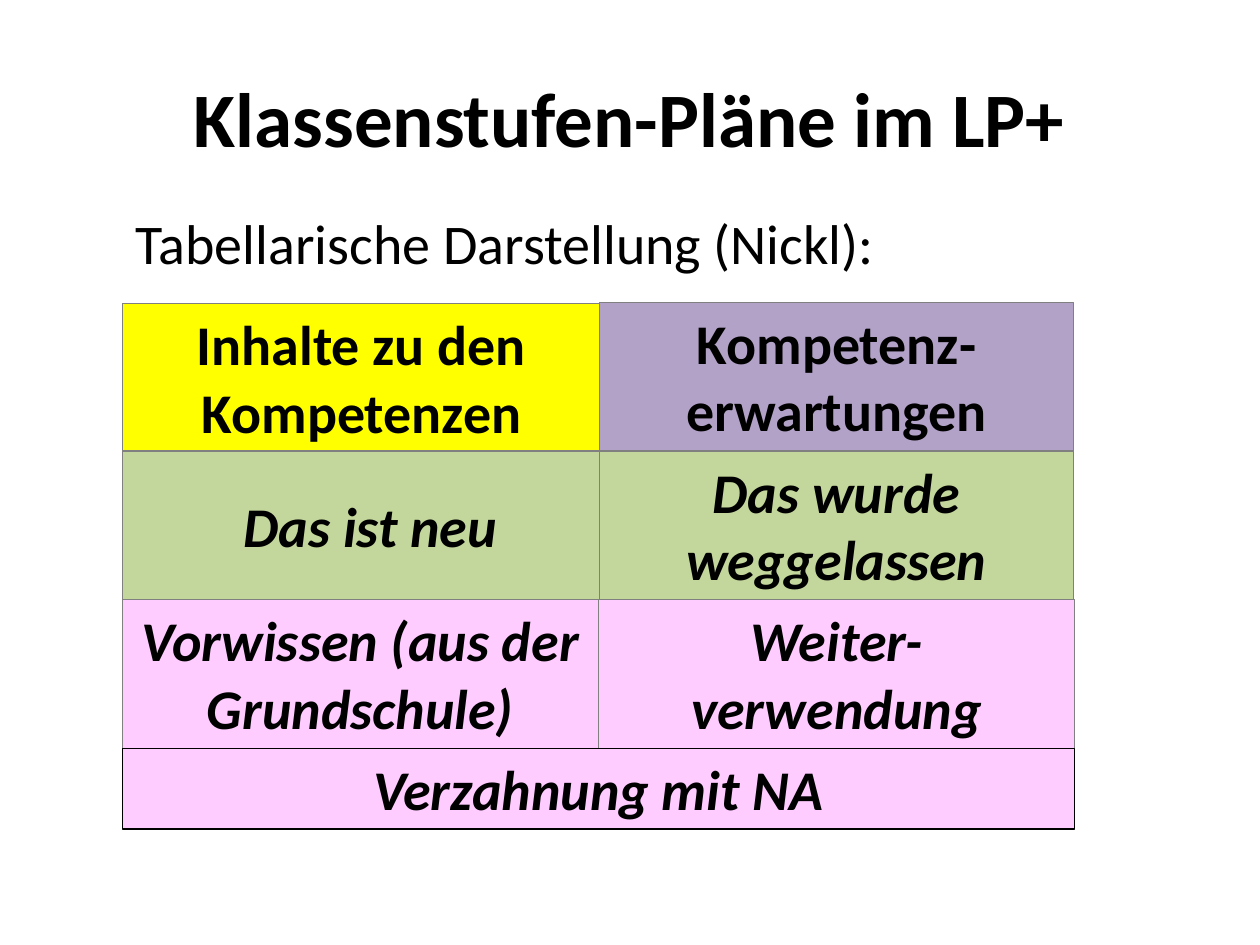
from pptx import Presentation
from pptx.dml.color import RGBColor
from pptx.enum import shapes, text
from pptx.util import Inches, Pt

BLACK = RGBColor(0x00, 0x00, 0x00)
GRAY = RGBColor(0x80, 0x80, 0x80)
YELLOW = RGBColor(0xFF, 0xFF, 0x00)
PURPLE = RGBColor(0xB3, 0xA2, 0xC7)
GREEN = RGBColor(0xC3, 0xD6, 0x9B)
PINK = RGBColor(0xFF, 0xCC, 0xFF)

TOP, MIDDLE = text.MSO_ANCHOR.TOP, text.MSO_ANCHOR.MIDDLE
LEFT, CENTER = text.PP_ALIGN.LEFT, text.PP_ALIGN.CENTER
BODY = {"name": "Calibri", "size": Pt(32), "bold": False, "italic": False}
TITLE = BODY | {"size": Pt(44), "bold": True}
HEADER = BODY | {"bold": True}
ENTRY = HEADER | {"italic": True}


def write(shape, lines, font_format, alignment=CENTER, anchor=TOP):
    frame = shape.text_frame
    frame.word_wrap = True
    frame.vertical_anchor = anchor
    frame.text = "\n".join(lines)
    for paragraph in frame.paragraphs:
        paragraph.alignment = alignment
        paragraph.font.color.rgb = BLACK
        for name, value in font_format.items():
            setattr(paragraph.font, name, value)


presentation = Presentation()
presentation.slide_width, presentation.slide_height = Inches(10), Inches(7.5)
slide = presentation.slides.add_slide(presentation.slide_layouts[6])

# Title and introduction
title = slide.shapes.add_textbox(Inches(0.5), Inches(0.3), Inches(9), Inches(1.25))
write(title, ["Klassenstufen-Pläne im LP+"], TITLE, anchor=MIDDLE)
introduction = slide.shapes.add_textbox(Inches(0.98), Inches(1.61), Inches(7.87), Inches(0.64))
write(introduction, ["Tabellarische Darstellung (Nickl):"], BODY, LEFT)

# Plan grid: left, top, width, height, fill, line, font format, anchor, lines
GRID_LEFT, ROW_HEIGHT = 0.97, 1.18
NEW_ROW = 3.58
PRIOR_ROW = NEW_ROW + ROW_HEIGHT
LINK_ROW = PRIOR_ROW + ROW_HEIGHT
boxes = [
    (GRID_LEFT, 2.41, 3.8, ROW_HEIGHT, YELLOW, GRAY, HEADER, TOP, ["Inhalte zu den", "Kompetenzen"]),
    (4.76, 2.4, 3.76, ROW_HEIGHT, PURPLE, GRAY, HEADER, TOP, ["Kompetenz-erwartungen"]),
    (GRID_LEFT, NEW_ROW, 3.94, ROW_HEIGHT, GREEN, GRAY, ENTRY, MIDDLE, ["Das ist neu"]),
    (4.76, NEW_ROW, 3.76, ROW_HEIGHT, GREEN, GRAY, ENTRY, TOP, ["Das wurde weggelassen"]),
    (GRID_LEFT, PRIOR_ROW, 3.78, ROW_HEIGHT, PINK, GRAY, ENTRY, TOP, ["Vorwissen (aus der Grundschule)"]),
    (4.75, PRIOR_ROW, 3.78, ROW_HEIGHT, PINK, GRAY, ENTRY, TOP, ["Weiter-", "verwendung"]),
    (GRID_LEFT, LINK_ROW, 7.56, 0.64, PINK, BLACK, ENTRY, TOP, ["Verzahnung mit NA"]),
]
for left, top, width, height, fill, line, font_format, anchor, lines in boxes:
    box = slide.shapes.add_shape(
        shapes.MSO_SHAPE.RECTANGLE, Inches(left), Inches(top), Inches(width), Inches(height))
    box.shadow.inherit = False
    box.fill.solid()
    box.fill.fore_color.rgb = fill
    box.line.color.rgb = line
    box.line.width = Pt(0.75)
    write(box, lines, font_format, anchor=anchor)

presentation.save("out.pptx")
